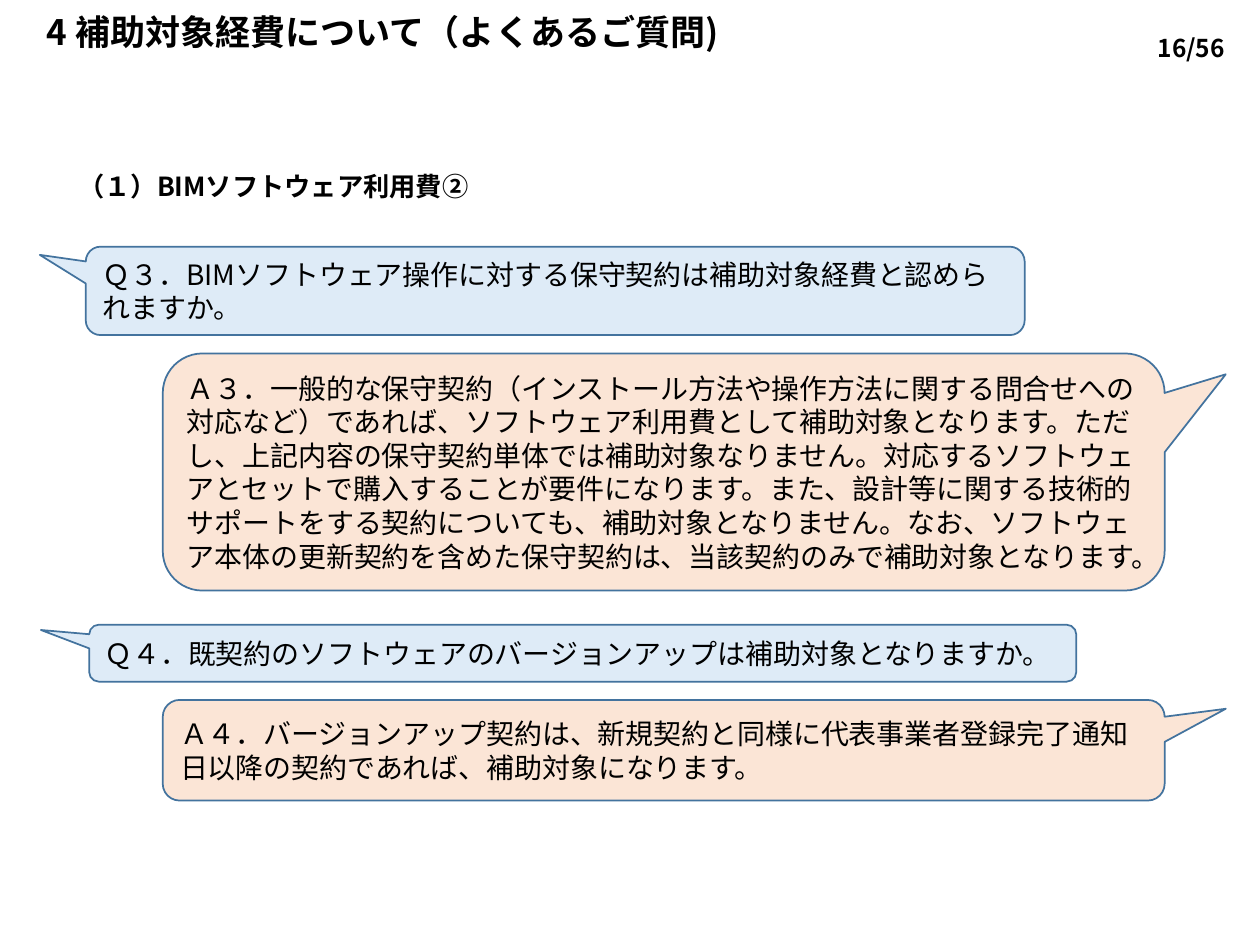
"""Build the FAQ slide on subsidised expenses for BIM software."""
import pptx
import pptx.util
import pptx.dml.color
import pptx.enum.shapes
import pptx.enum.text
import pptx.oxml
import pptx.oxml.ns

Pt = pptx.util.Pt
RGBColor = pptx.dml.color.RGBColor
ALIGN = pptx.enum.text.PP_ALIGN
ANCHOR = pptx.enum.text.MSO_ANCHOR

FONT = "Noto Sans CJK JP"
BLACK = RGBColor(0x00, 0x00, 0x00)
BLUE = RGBColor(0xDE, 0xEB, 0xF7)
PEACH = RGBColor(0xFB, 0xE5, 0xD6)
OUTLINE = RGBColor(0x43, 0x73, 0x9E)


def set_text(sp, text, size=16, bold=False, align=ALIGN.LEFT,
             anchor=ANCHOR.MIDDLE, spacing=None, indent=None):
    tf = sp.text_frame
    tf.word_wrap = True
    tf.auto_size = pptx.enum.text.MSO_AUTO_SIZE.NONE
    tf.vertical_anchor = anchor
    p = tf.paragraphs[0]
    p.alignment = align
    p.line_spacing = spacing
    if indent is not None:
        pPr = p._p.get_or_add_pPr()
        pPr.set("marL", str(indent))
        pPr.set("indent", "0")
        pptx.oxml.ns.qn("a:buNone")
        pPr.append(pptx.oxml.parse_xml(
            f'<a:buNone {pptx.oxml.ns.nsdecls("a")}/>'))
        p.space_before = Pt(0)
    r = p.add_run()
    r.text = text
    r.font.size = Pt(size)
    r.font.bold = bold
    r.font.color.rgb = BLACK
    r.font.name = FONT
    r.font._element.append(pptx.oxml.parse_xml(
        f'<a:ea {pptx.oxml.ns.nsdecls("a")} typeface="{FONT}"/>'))


def place(sp, left, top, width, height):
    sp.left, sp.top, sp.width, sp.height = Pt(left), Pt(top), Pt(width), Pt(height)


prs = pptx.Presentation()
prs.slide_width, prs.slide_height = Pt(720), Pt(540)
s = prs.slides.add_slide(prs.slide_layouts[1])

title = s.shapes.title
place(title, 19.5, 0, 584.5, 39)
set_text(title, "4 補助対象経費について（よくあるご質問)", size=20, bold=True, spacing=0.9)

body = s.placeholders[1]
place(body, 19.5, 93.5, 680.5, 392.5)
set_text(body, "（１）BIMソフトウェア利用費②", size=15, bold=True,
         anchor=ANCHOR.TOP, indent=Pt(18))

page = s.shapes.add_textbox(Pt(641.5), Pt(0), Pt(78.5), Pt(31))
set_text(page, "16/56", size=14, bold=True, align=ALIGN.CENTER, spacing=Pt(40))

question = (BLUE, (-0.549, -0.407, 0.167))
answer = (PEACH, (0.561, -0.412, 0.167))
callouts = [
    (question, 49, 141, 536.5, 50.5,
     "Ｑ３．BIMソフトウェア操作に対する保守契約は補助対象経費と認められますか。"),
    (answer, 93, 202, 572.5, 135.5,
     "Ａ３．一般的な保守契約（インストール方法や操作方法に関する問合せへの対応など）であれば、"
     "ソフトウェア利用費として補助対象となります。ただし、上記内容の保守契約単体では補助対象なりません。"
     "対応するソフトウェアとセットで購入することが要件になります。また、設計等に関する技術的サポートを"
     "する契約についても、補助対象となりません。なお、ソフトウェア本体の更新契約を含めた保守契約は、"
     "当該契約のみで補助対象となります。"),
    (question, 51, 357, 564, 32.5,
     "Ｑ４．既契約のソフトウェアのバージョンアップは補助対象となりますか。"),
    (answer, 93, 400, 572.5, 57.5,
     "Ａ４．バージョンアップ契約は、新規契約と同様に代表事業者登録完了通知日以降の契約であれば、"
     "補助対象になります。"),
]
for (fill, adjustments), left, top, width, height, text in callouts:
    sp = s.shapes.add_shape(
        pptx.enum.shapes.MSO_SHAPE.ROUNDED_RECTANGULAR_CALLOUT,
        Pt(left), Pt(top), Pt(width), Pt(height))
    for i, value in enumerate(adjustments):
        sp.adjustments[i] = value
    sp.shadow.inherit = False
    sp.fill.solid()
    sp.fill.fore_color.rgb = fill
    sp.line.color.rgb = OUTLINE
    sp.line.width = Pt(1)
    set_text(sp, text)

prs.save("out.pptx")
